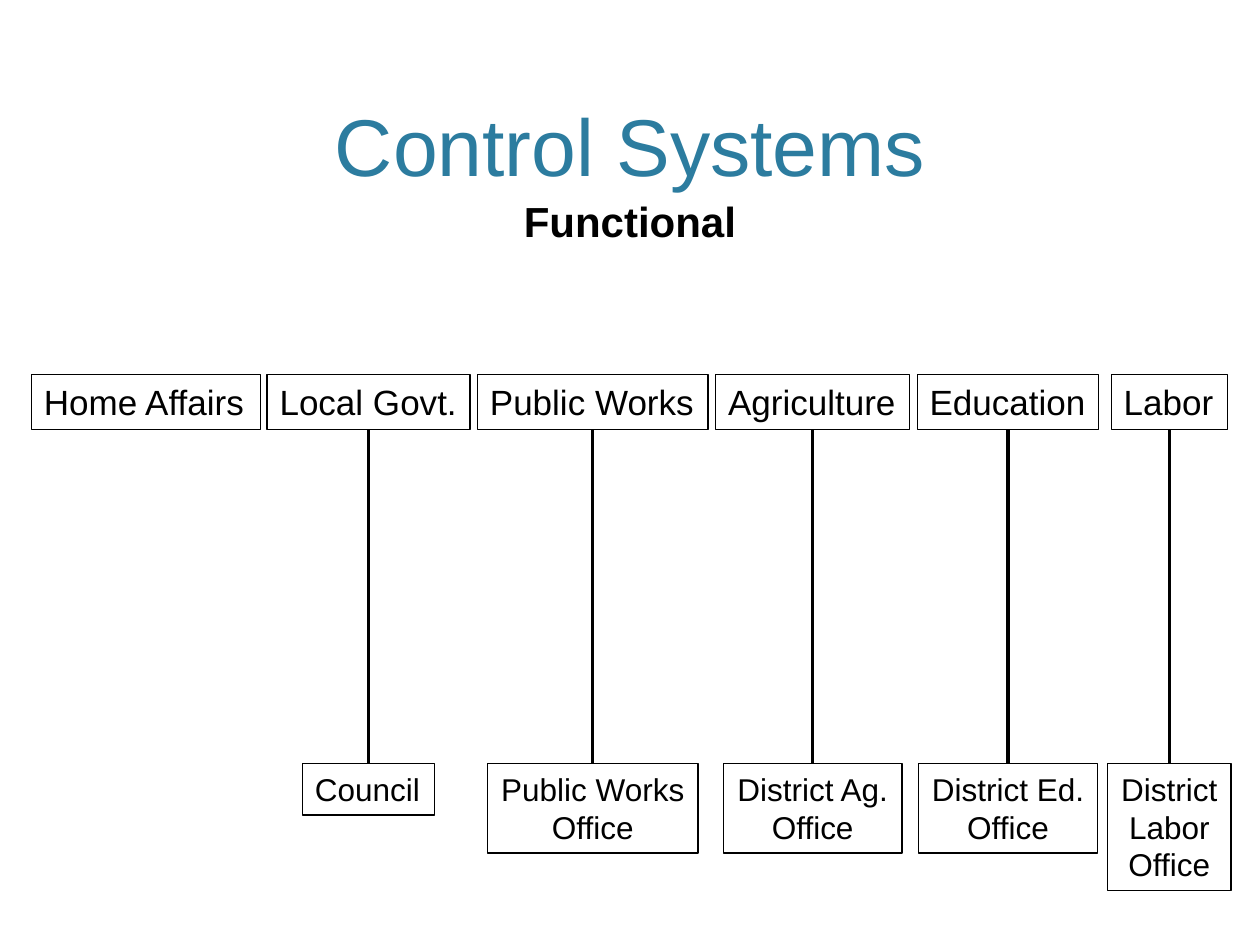
from pptx import Presentation
from pptx.dml.color import RGBColor
from pptx.enum.shapes import MSO_CONNECTOR, MSO_SHAPE
from pptx.enum.text import MSO_ANCHOR, MSO_AUTO_SIZE, PP_ALIGN
from pptx.util import Inches, Pt
from lxml import etree

LEFT, CENTER = PP_ALIGN.LEFT, PP_ALIGN.CENTER
TOP, BOTTOM = MSO_ANCHOR.TOP, MSO_ANCHOR.BOTTOM
FIT_SHAPE, NO_FIT = MSO_AUTO_SIZE.SHAPE_TO_FIT_TEXT, MSO_AUTO_SIZE.NONE
RECTANGLE = MSO_SHAPE.RECTANGLE
STRAIGHT = MSO_CONNECTOR.STRAIGHT
BOX_BOTTOM, BOX_TOP = 2, 0
DRAWING_NS = "http://schemas.openxmlformats.org/drawingml/2006/main"

FONT, BLACK, TITLE_BLUE = "Arial", "000000", "2C7C9F"
MINISTRY_TOP, MINISTRY_HEIGHT, OFFICE_TOP = 2.97, 0.44, 6.06
LINE_HEIGHT, PADDING = 0.3, 0.11

# Ministry: name, left, width; district office: lines, left, width
BRANCHES = [
    (("Home Affairs", 0.25, 1.82), None),
    (("Local Govt.", 2.12, 1.61), ("Council", 2.4, 1.05)),
    (("Public Works", 3.79, 1.83), ("Public Works\nOffice", 3.87, 1.67)),
    (("Agriculture", 5.68, 1.54), ("District Ag.\nOffice", 5.74, 1.42)),
    (("Education", 7.28, 1.44), ("District Ed.\nOffice", 7.29, 1.42)),
    (("Labor", 8.82, 0.92), ("District\nLabor\nOffice", 8.79, 0.98)),
]


def color(hex_string):
    return RGBColor.from_string(hex_string)


def set_text(tf, text, size, hex_color, align=LEFT, bold=False, anchor=TOP):
    tf.text = text
    tf.vertical_anchor = anchor
    for p in tf.paragraphs:
        p.alignment = align
        p.font.name = FONT
        p.font.size = Pt(size)
        p.font.bold = bold
        p.font.color.rgb = color(hex_color)


def add_heading(slide, left, top, width, height):
    # Title
    title = slide.shapes.title
    title.left, title.top = Inches(left), Inches(top)
    title.width, title.height = Inches(width), Inches(height)
    set_text(title.text_frame, "Control Systems", 46, TITLE_BLUE, CENTER,
             anchor=BOTTOM)
    title.text_frame.auto_size = NO_FIT

    # Subtitle, centred under the title with room for one line
    sub_width = 2
    sub = slide.shapes.add_textbox(
        Inches(left + (width - sub_width) / 2), Inches(top + 1.38),
        Inches(sub_width), Inches(0.5))
    set_text(sub.text_frame, "Functional", 24, BLACK, CENTER, bold=True)
    sub.text_frame.word_wrap = True
    sub.text_frame.auto_size = NO_FIT


def add_box(slide, text, size, align, left, top, width, height):
    s = slide.shapes.add_shape(RECTANGLE, Inches(left), Inches(top),
                               Inches(width), Inches(height))
    s.shadow.inherit = False
    s.fill.background()
    s.line.color.rgb = color(BLACK)
    s.line.width = Pt(0.75)
    set_text(s.text_frame, text, size, BLACK, align)
    s.text_frame.word_wrap = False
    s.text_frame.auto_size = FIT_SHAPE
    return s


def add_link(slide, upper, lower):
    link = slide.shapes.add_connector(STRAIGHT, 0, 0, 0, 0)
    link.begin_connect(upper, BOX_BOTTOM)
    link.end_connect(lower, BOX_TOP)
    link.line.color.rgb = color(BLACK)
    link.line.width = Pt(1.75)
    etree.SubElement(link._element.spPr, f"{{{DRAWING_NS}}}effectLst")


def add_branch(slide, ministry, office):
    name, left, width = ministry
    upper = add_box(slide, name, 20, LEFT, left, MINISTRY_TOP, width,
                    MINISTRY_HEIGHT)
    if office:
        text, left, width = office
        lines = text.count("\n") + 1
        lower = add_box(slide, text, 18, CENTER if lines > 1 else LEFT, left,
                        OFFICE_TOP, width, PADDING + lines * LINE_HEIGHT)
        add_link(slide, upper, lower)


def main():
    prs = Presentation()
    prs.slide_width, prs.slide_height = Inches(10), Inches(7.5)
    slide = prs.slides.add_slide(prs.slide_layouts[5])
    add_heading(slide, 0.6, 0.12, 8.8, 1.46)
    for ministry, office in BRANCHES:
        add_branch(slide, ministry, office)
    prs.save("out.pptx")


if __name__ == "__main__":
    main()
